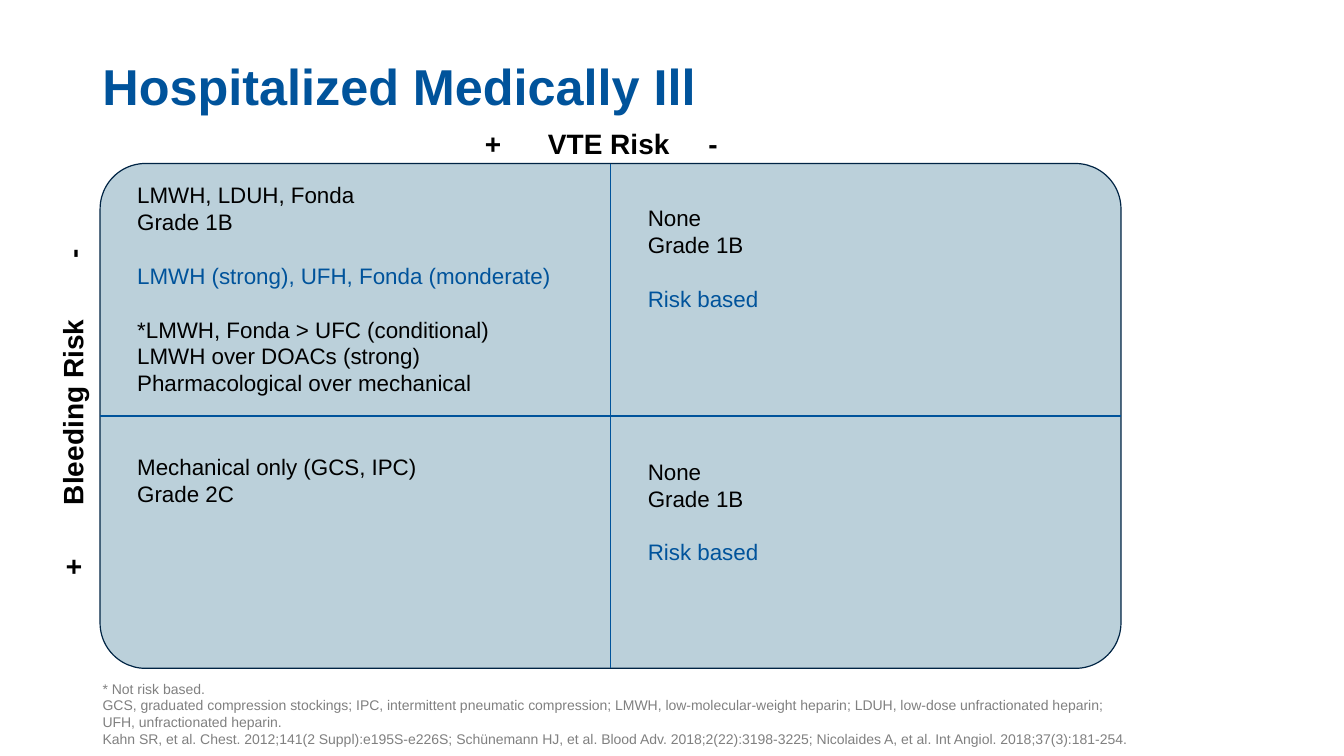
from lxml.etree import SubElement
from pptx import Presentation
from pptx.dml.color import RGBColor
from pptx.enum.shapes import MSO_CONNECTOR, MSO_SHAPE
from pptx.enum.text import MSO_ANCHOR, PP_ALIGN
from pptx.oxml.ns import qn
from pptx.util import Pt

COLORS = {"blue": "00539B", "navy": "002444", "teal": "156082", "black": "000000", "gray": "808080"}
RISK_BASED = [("None",), ("Grade 1B",), ("Risk based", "blue", True)]
CELLS = [
    (90.9, 126, 162.7, [
        ("LMWH, LDUH, Fonda",),
        ("Grade 1B",),
        ("LMWH (strong), UFH, Fonda (monderate)", "blue", True),
        ("*LMWH, Fonda > UFC (conditional)", "black", True),
        ("LMWH over DOACs (strong)",),
        ("Pharmacological over mechanical",),
    ]),
    (455.6, 142.6, 85, RISK_BASED),
    (90.9, 320, 46, [("Mechanical only (GCS, IPC)",), ("Grade 2C",)]),
    (455.6, 323.6, 85, RISK_BASED),
]
FOOTNOTES = [
    "* Not risk based.",
    "GCS, graduated compression stockings; IPC, intermittent pneumatic compression; "
    "LMWH, low-molecular-weight heparin; LDUH, low-dose unfractionated heparin;",
    "UFH, unfractionated heparin.",
    "Kahn SR, et al. Chest. 2012;141(2 Suppl):e195S-e226S; Schünemann HJ, et al. Blood Adv. "
    "2018;2(22):3198-3225; Nicolaides A, et al. Int Angiol. 2018;37(3):181-254.",
]


def rgb(name):
    """Return the named colour."""
    return RGBColor.from_string(COLORS[name])


def write(para, text, size=16, color="black", bold=False, before=0, tabs=()):
    """Fill a paragraph with formatted text."""
    para.alignment = PP_ALIGN.LEFT
    if before:
        para.space_before = Pt(before)
    if tabs:
        tab_list = SubElement(para._p.get_or_add_pPr(), qn("a:tabLst"))
        for position in tabs:
            SubElement(tab_list, qn("a:tab"), pos=str(Pt(position)), algn="l")
    span = para.add_run()
    span.text = text
    span.font.name = "Arial"
    span.font.size = Pt(size)
    span.font.bold = bold
    span.font.color.rgb = rgb(color)


def add_text(page, left, top, width, height, lines, anchor=MSO_ANCHOR.TOP):
    """Add a text box with one paragraph per set of write() options."""
    box = page.shapes.add_textbox(Pt(left), Pt(top), Pt(width), Pt(height))
    frame = box.text_frame
    frame.word_wrap = True
    frame.vertical_anchor = anchor
    for index, options in enumerate(lines):
        para = frame.add_paragraph() if index else frame.paragraphs[0]
        write(para, **options)
    return box


def add_title(page, text):
    """Place and format the title placeholder."""
    title = page.shapes.title
    title.left, title.top, title.width, title.height = Pt(66), Pt(0), Pt(828), Pt(87)
    title.text_frame.vertical_anchor = MSO_ANCHOR.BOTTOM
    para = title.text_frame.paragraphs[0]
    para.line_spacing = 0.9
    write(para, text, size=36, color="blue", bold=True)


def add_panel(page):
    """Add the translucent rounded panel behind the four cells."""
    panel = page.shapes.add_shape(MSO_SHAPE.ROUNDED_RECTANGLE, Pt(71.5), Pt(116.8), Pt(729.2), Pt(360.6))
    panel.adjustments[0] = 0.09
    panel.shadow.inherit = False
    panel.fill.solid()
    panel.fill.fore_color.rgb = rgb("teal")
    fill_color = panel.fill._xPr.find(qn("a:solidFill"))[0]
    SubElement(fill_color, qn("a:alpha"), val="29000")
    panel.line.color.rgb = rgb("navy")
    panel.line.width = Pt(0.85)
    return panel


def add_divider(page, panel, start, end):
    """Join two opposite sides of the panel with a line."""
    divider = page.shapes.add_connector(MSO_CONNECTOR.STRAIGHT, 0, 0, 0, 0)
    divider.begin_connect(panel, start)
    divider.end_connect(panel, end)
    divider.line.color.rgb = rgb("blue")
    divider.line.width = Pt(0.85)
    SubElement(divider._element.spPr, qn("a:effectLst"))


def main():
    """Build the risk matrix slide."""
    deck = Presentation()
    deck.slide_width, deck.slide_height = Pt(960), Pt(540)
    page = deck.slides.add_slide(deck.slide_layouts[5])
    add_title(page, "Hospitalized Medically Ill")

    axis = {"size": 20, "bold": True}
    add_text(page, 339.3, 87.1, 193, 31.7, [{"text": "+\tVTE Risk\t-", "tabs": (45, 159.5), **axis}])
    bleeding = add_text(page, -74.9, 281.5, 253.4, 31.7,
                        [{"text": "+\tBleeding Risk\t-", "tabs": (50.6, 226.8), **axis}])
    bleeding.text_frame.margin_left = Pt(12.7)
    bleeding.text_frame.margin_right = Pt(0)
    bleeding.rotation = 270

    panel = add_panel(page)
    add_divider(page, panel, 1, 3)
    add_divider(page, panel, 0, 2)
    for left, top, height, lines in CELLS:
        options = [
            {"text": text, "color": style[0] if style else "black", "before": 19.2 if style else 0}
            for text, *style in lines
        ]
        add_text(page, left, top, 325.4, height, options)

    notes = [{"text": text, "size": 10, "color": "gray"} for text in FOOTNOTES]
    add_text(page, 66.2, 508.6, 807.8, 28.8, notes, anchor=MSO_ANCHOR.BOTTOM)
    deck.save("out.pptx")


if __name__ == "__main__":
    main()
